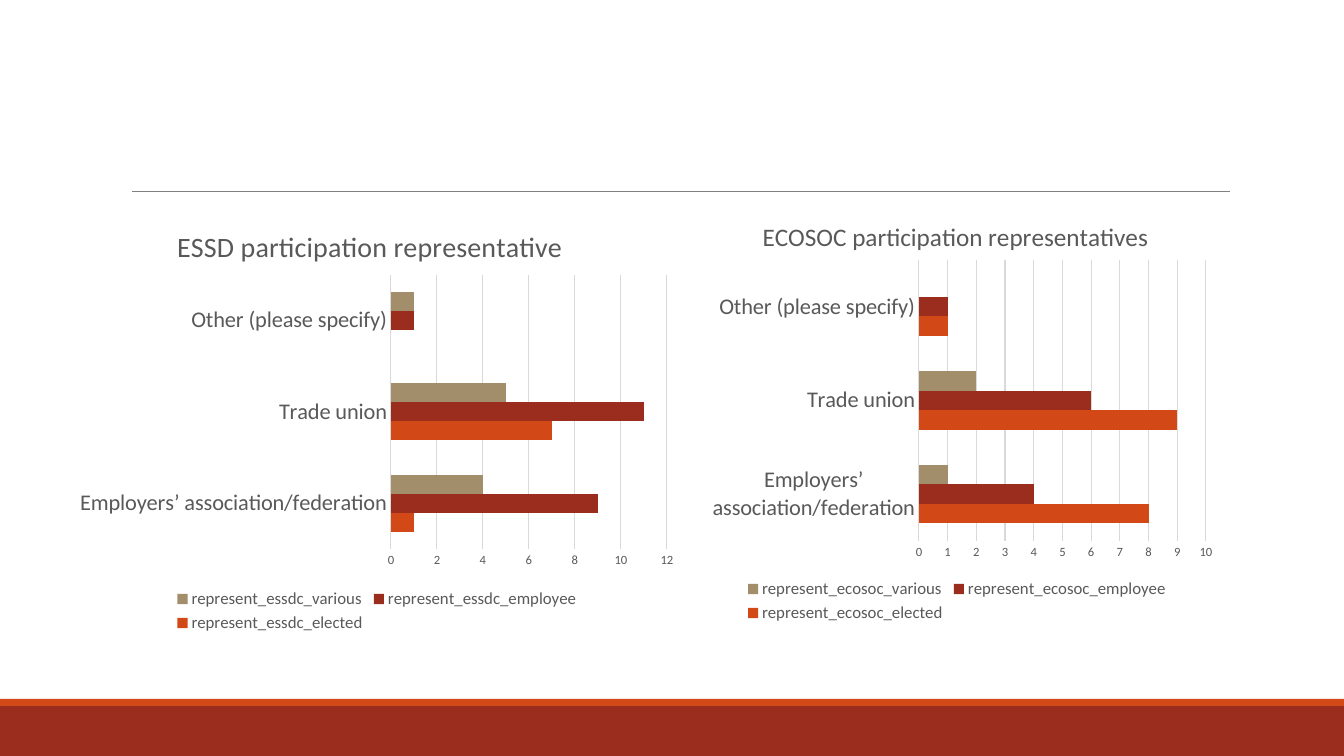
from lxml import etree
from pptx import Presentation
from pptx.chart.data import CategoryChartData
from pptx.dml.color import RGBColor
from pptx.enum import chart as ch, shapes
from pptx.oxml import ns
from pptx.util import Emu, Pt

PX = 12192000 / 1344
RUST = RGBColor(0x9B, 0x2D, 0x1F)
ORANGE = RGBColor(0xD3, 0x48, 0x17)
TAN = RGBColor(0xA2, 0x8E, 0x6A)
RULE_GREY = RGBColor(0x80, 0x80, 0x80)
GRID_GREY = RGBColor(0xD9, 0xD9, 0xD9)
TEXT_GREY = RGBColor(0x59, 0x59, 0x59)
BLACK = RGBColor(0, 0, 0)


def px(*lengths):
    return [Emu(round(n * PX)) for n in lengths]


def place(part, index, frame, box, inner=False):
    """Fix a chart part at a px box on the slide, as fractions of the chart frame."""
    for old in part.findall(ns.qn("c:layout")):
        part.remove(old)
    layout = etree.Element(ns.qn("c:layout"))
    manual = etree.SubElement(layout, ns.qn("c:manualLayout"))
    values = [("xMode", "edge"), ("yMode", "edge")]
    if inner:
        values.insert(0, ("layoutTarget", "inner"))
    left, top, width, height = frame
    fractions = [(box[0] - left) / width, (box[1] - top) / height]
    fractions += [n / size for n, size in zip(box[2:], (width, height))]
    values += [(k, f"{v:.4f}") for k, v in zip("xywh", fractions)]
    for key, value in values:
        etree.SubElement(manual, ns.qn(f"c:{key}")).set("val", value)
    part.insert(index, layout)


deck = Presentation()
deck.slide_width, deck.slide_height = px(1344, 756)
slide = deck.slides.add_slide(deck.slide_layouts[6])

for top, height, color in [(706, 50, RUST), (699, 7, ORANGE)]:
    band = slide.shapes.add_shape(shapes.MSO_SHAPE.RECTANGLE, *px(0, top, 1344, height))
    band.shadow.inherit = False
    band.fill.solid()
    band.fill.fore_color.rgb = color
    band.line.fill.background()

rule = slide.shapes.add_connector(shapes.MSO_CONNECTOR.STRAIGHT, *px(132, 191, 1230, 191))
rule.line.color.rgb = RULE_GREY
rule.line.width = Pt(0.5)
etree.SubElement(rule._element.spPr, ns.qn("a:effectLst"))

GROUPS = ["Employers’ association/federation", "Trade union", "Other (please specify)"]
ROLES = [("elected", ORANGE), ("employee", RUST), ("various", TAN)]
COUNCILS = [
    dict(title="ECOSOC participation representatives", size=18, prefix="represent_ecosoc_",
         frame=(691, 191, 532, 436), plot=(919, 260, 287, 281), title_at=(758, 215),
         counts=[(8, 9, 1), (4, 6, 1), (1, 2, None)], top=10, step=1),
    dict(title="ESSD participation representative", size=20, prefix="represent_essdc_",
         frame=(69, 201, 616, 436), plot=(391, 275, 276, 274), title_at=(172, 222),
         counts=[(1, 7, None), (9, 11, 1), (4, 5, 1)], top=12, step=2),
]

for council in COUNCILS:
    data = CategoryChartData()
    data.categories = GROUPS
    for (role, _), counts in zip(ROLES, council["counts"]):
        data.add_series(council["prefix"] + role, counts)
    frame = council["frame"]
    chart = slide.shapes.add_chart(ch.XL_CHART_TYPE.BAR_CLUSTERED, *px(*frame), data).chart

    chart.has_title = True
    heading = chart.chart_title.text_frame
    heading.text = council["title"]
    chart.chart_title.include_in_layout = False
    chart.has_legend = True
    chart.legend.position = ch.XL_LEGEND_POSITION.BOTTOM
    chart.legend.include_in_layout = False

    bars = chart.plots[0]
    bars.gap_width = 182
    bars.overlap = 0
    bars.vary_by_categories = False
    for series, (_, color) in zip(bars.series, ROLES):
        series.format.fill.solid()
        series.format.fill.fore_color.rgb = color

    groups, counts = chart.category_axis, chart.value_axis
    for axis in (groups, counts):
        axis.major_tick_mark = axis.minor_tick_mark = ch.XL_TICK_MARK.NONE
    counts.minimum_scale = 0
    counts.maximum_scale = council["top"]
    counts.major_unit = council["step"]
    counts.format.line.fill.background()
    for line in (groups.format.line, counts.major_gridlines.format.line):
        line.color.rgb = GRID_GREY
        line.width = Pt(0.75)

    for font, size, color in [
        (chart.font, 10, BLACK),
        (heading.paragraphs[0].runs[0].font, council["size"], TEXT_GREY),
        (groups.tick_labels.font, 16, TEXT_GREY),
        (counts.tick_labels.font, 9, TEXT_GREY),
        (chart.legend.font, 12, TEXT_GREY),
    ]:
        for key, value in dict(name="Calibri", size=Pt(size), bold=False).items():
            setattr(font, key, value)
        font.color.rgb = color

    place(chart.chart_title._element, 1, frame, council["title_at"])
    place(chart._chartSpace.chart.plotArea, 0, frame, council["plot"], inner=True)

deck.save("out.pptx")
